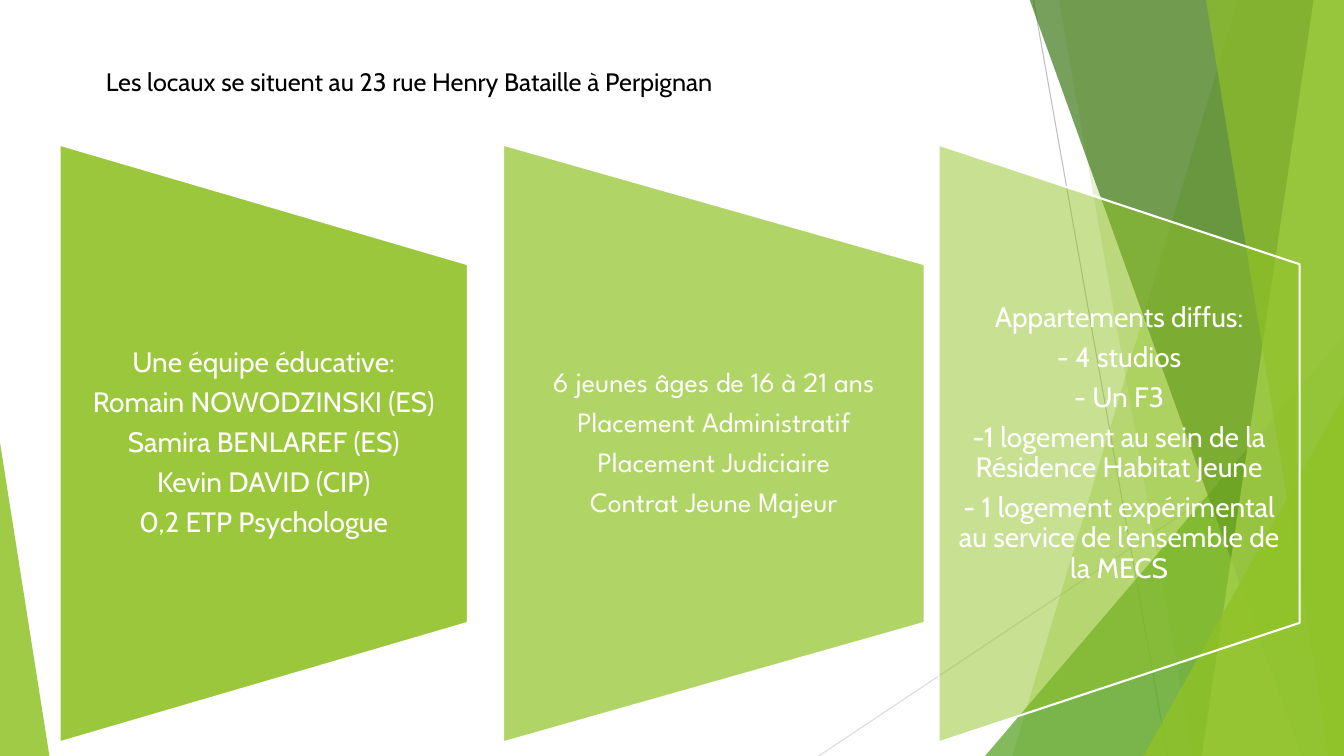
from pptx import Presentation
from pptx.dml.color import RGBColor as RGB
from pptx.enum.shapes import MSO_CONNECTOR as CONN, MSO_SHAPE as SHAPE
from pptx.enum.text import MSO_ANCHOR as ANCHOR, PP_ALIGN as ALIGN
from pptx.oxml.ns import qn
from pptx.util import Inches, Pt
from lxml.etree import SubElement

W, H = 13.33, 7.5
COLORS = {"lime": "90C226", "green": "54A021", "forest": "3F7819", "pale": "C0E474",
          "white": "FFFFFF", "black": "000000", "gray": "BFBFBF", "silver": "D9D9D9"}

prs = Presentation()
prs.slide_width, prs.slide_height = Inches(W), Inches(H)
slide = prs.slides.add_slide(prs.slide_layouts[5])
shapes = slide.shapes


def paint(s, color, opacity):
    """Fill a shape with a translucent colour, without line or shadow."""
    s.shadow.inherit = False
    s.fill.solid()
    s.fill.fore_color.rgb = RGB.from_string(COLORS[color])
    s.line.fill.background()
    clr = s._element.spPr.find(qn("a:solidFill"))[0]
    SubElement(clr, qn("a:alpha")).set("val", str(opacity * 1000))


def add_run(p, text, size, font, color):
    r = p.add_run()
    r.text = text
    r.font.size, r.font.name = Pt(size), font
    r.font.color.rgb = RGB.from_string(COLORS[color])


# Thin background lines
for x1, y1, x2, y2, color in [(10.25, 0, 11.58, H, "gray"), (W, 4.03, 8.12, H, "silver")]:
    s = shapes.add_connector(CONN.STRAIGHT, *map(Inches, (x1, y1, x2, y2)))
    s.line.width = Pt(0.75)
    s.line.color.rgb = RGB.from_string(COLORS[color])
    SubElement(s._element.spPr, qn("a:effectLst"))

# Facets: bands (top x, bottom x) run to the right edge, triangles (left, top, width, apex) to the bottom
facets = [
    ((12.28, 10.04), "lime", 30),
    ((10.5, 11.83), "lime", 20),
    ((9.77, 3.33, 3.56, 1), "green", 72),
    ((10.21, 12.91), "forest", 70),
    ((13.03, 11.92), "pale", 70),
    ((11.96, 13.18), "lime", 65),
    ((11.34, 3.93, 1.99, 1), "lime", 80),
    ((0, 4.39, 0.49, 0), "lime", 85),
]
for geometry, color, opacity in facets:
    if len(geometry) == 2:
        top, bottom = geometry
        outline = shapes.build_freeform(Inches(top), Inches(-0.01))
        outline.add_line_segments([(Inches(x), Inches(y)) for x, y in
                                   [(W, -0.01), (W, H), (bottom, H)]])
        s = outline.convert_to_shape()
    else:
        left, top, width, apex = geometry
        s = shapes.add_shape(SHAPE.ISOSCELES_TRIANGLE, Inches(left), Inches(top),
                             Inches(width), Inches(H - top))
        s.adjustments[0] = apex
    paint(s, color, opacity)

# Three panels: trapezoids turned on their side, text over the middle three fifths
PANEL_H, PANEL_MID = 5.93, 4.4
TEXT_H = PANEL_H * 0.6
panels = [
    (0.59, 4.05, 90, "Cabin",
     ["Une équipe éducative:", "Romain NOWODZINSKI (ES)", "Samira BENLAREF (ES)",
      "Kevin DAVID (CIP)", "0,2 ETP Psychologue"]),
    (4.99, 4.18, 70, "League Spartan",
     ["6 jeunes âges de 16 à 21 ans", "Placement Administratif",
      "Placement Judiciaire", "Contrat Jeune Majeur"]),
    (9.31, 3.58, 50, "Cabin",
     ["Appartements diffus:", "- 4 studios", "- Un F3",
      "-1 logement au sein de la Résidence Habitat Jeune",
      "- 1 logement expérimental au service de l’ensemble de la MECS"]),
]
for left, width, opacity, font, lines in panels:
    s = shapes.add_shape(SHAPE.FLOWCHART_MANUAL_OPERATION,
                         Inches(left + (width - PANEL_H) / 2), Inches(PANEL_MID - width / 2),
                         Inches(PANEL_H), Inches(width))
    s.rotation = 270
    paint(s, "lime", opacity)
    s.line.color.rgb = RGB.from_string(COLORS["white"])
    s.line.width = Pt(1.5)

    tf = shapes.add_textbox(Inches(left), Inches(PANEL_MID - TEXT_H / 2),
                            Inches(width), Inches(TEXT_H)).text_frame
    tf.word_wrap = True
    tf.vertical_anchor = ANCHOR.MIDDLE
    tf.margin_left = tf.margin_right = Inches(0.14)
    tf.margin_top = tf.margin_bottom = 0
    for i, line in enumerate(lines):
        p = tf.add_paragraph() if i else tf.paragraphs[0]
        p.alignment, p.line_spacing, p.space_after = ALIGN.CENTER, 0.9, Pt(7)
        add_run(p, line, 20, font, "white")

# Title
title = shapes.title
title.left, title.top, title.width, title.height = map(Inches, (0.95, 0.61, 10.83, 0.4))
tf = title.text_frame
tf.vertical_anchor = ANCHOR.TOP
p = tf.paragraphs[0]
p.alignment = ALIGN.LEFT
add_run(p, "Les locaux se situent au 23 rue Henry Bataille à Perpignan", 18, "Cabin", "black")

prs.save("out.pptx")
